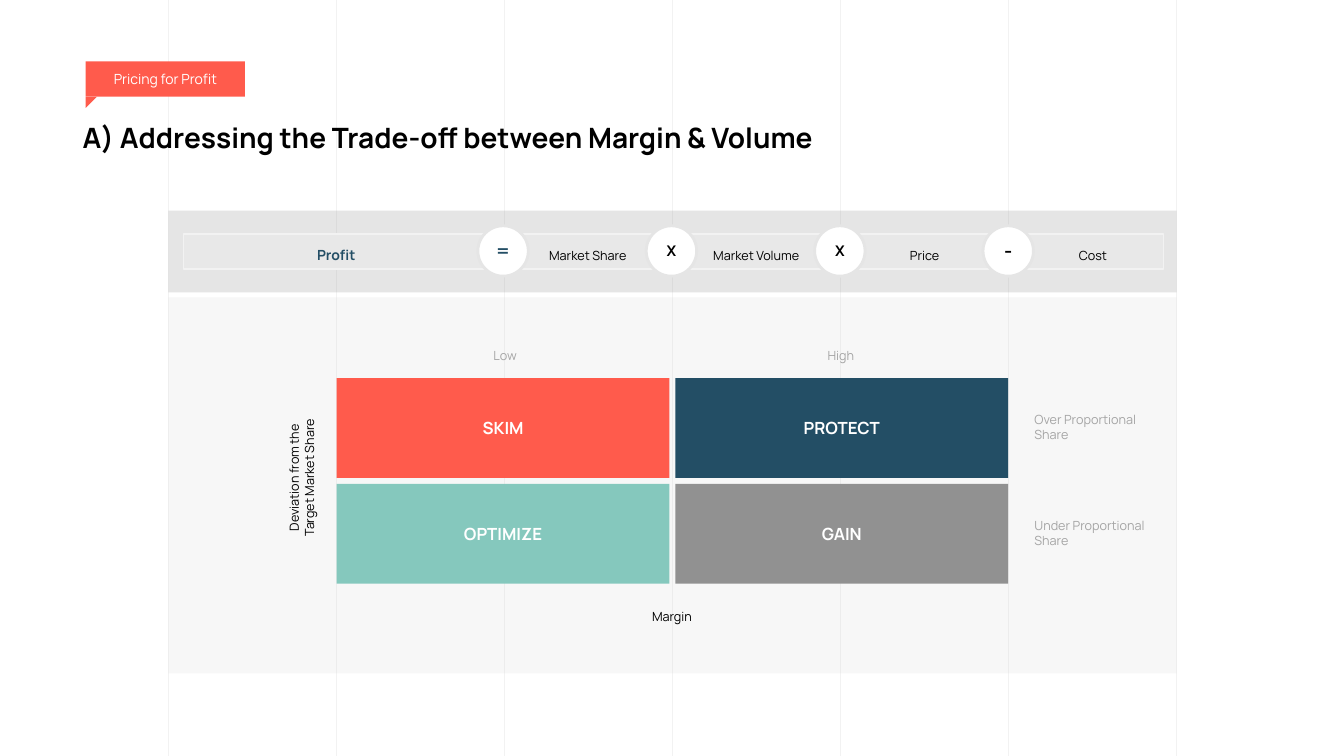
from lxml.etree import SubElement
from pptx import Presentation
from pptx.dml.color import RGBColor
from pptx.enum.shapes import MSO_CONNECTOR, MSO_SHAPE
from pptx.enum.text import MSO_ANCHOR, PP_ALIGN
from pptx.oxml.ns import qn
from pptx.util import Inches, Pt

WHITE = RGBColor(0xFF, 0xFF, 0xFF)
BLACK = RGBColor(0x00, 0x00, 0x00)
CORAL = RGBColor(0xFF, 0x5B, 0x4C)
NAVY = RGBColor(0x23, 0x4E, 0x65)
MINT = RGBColor(0x85, 0xC8, 0xBD)
GRAY = RGBColor(0x91, 0x91, 0x91)
LABEL_GRAY = RGBColor(0xA5, 0xA5, 0xA5)
BAND_GRAY = RGBColor(0x7F, 0x7F, 0x7F)
PANEL_GRAY = RGBColor(0xD8, 0xD8, 0xD8)
TERM_FILL = RGBColor(0xE8, 0xE8, 0xE8)
PALE_LINE = RGBColor(0xF2, 0xF2, 0xF2)
RING = RGBColor(0xE5, 0xE5, 0xE5)

presentation = Presentation()
presentation.slide_width = Inches(13.33)
presentation.slide_height = Inches(7.5)
slide = presentation.slides.add_slide(presentation.slide_layouts[6])


def add_box(kind, left, top, width, height, fill, line=None, line_width=1):
    shape = slide.shapes.add_shape(
        kind, Inches(left), Inches(top), Inches(width), Inches(height))
    shape.shadow.inherit = False
    shape.fill.solid()
    shape.fill.fore_color.rgb = fill
    if line is None:
        shape.line.fill.background()
    else:
        shape.line.color.rgb = line
        shape.line.width = Pt(line_width)
    return shape


def write(shape, text, size, color, bold=False, align=PP_ALIGN.CENTER,
          anchor=MSO_ANCHOR.MIDDLE, margin=0, spacing=None):
    """Fill a shape with text; margin is the inset above and below it."""
    frame = shape.text_frame
    frame.text = text
    frame.word_wrap = True
    frame.vertical_anchor = anchor
    frame.margin_left = frame.margin_right = 0
    frame.margin_top = frame.margin_bottom = Inches(margin)
    for paragraph in frame.paragraphs:
        paragraph.alignment = align
        if spacing:
            paragraph.line_spacing = spacing
        for run in paragraph.runs:
            run.font.name = "Manrope"
            run.font.size = Pt(size)
            run.font.bold = bold
            run.font.color.rgb = color


# Background grid lines
for column in range(1, 8):
    x = Inches(column * 10 / 6)
    grid_line = slide.shapes.add_connector(
        MSO_CONNECTOR.STRAIGHT, x, 0, x, Inches(7.5))
    grid_line.line.color.rgb = PALE_LINE
    grid_line.line.width = Pt(0.75)
    SubElement(grid_line._element.spPr, qn("a:effectLst"))

# Title and section tag
title = slide.shapes.add_textbox(
    Inches(0.82), Inches(1.13), Inches(8.93), Inches(0.46))
write(title, "A) Addressing the Trade-off between Margin & Volume",
      20, BLACK, bold=True, align=PP_ALIGN.LEFT)
tag = add_box(MSO_SHAPE.RECTANGLE, 0.85, 0.61, 1.58, 0.35, CORAL)
write(tag, "Pricing for Profit", 10, WHITE)
tag_tail = add_box(MSO_SHAPE.RIGHT_TRIANGLE, 0.85, 0.96, 0.11, 0.11, CORAL)
tag_tail.rotation = 90

# Translucent band behind the formula and panel behind the matrix
for top, height, color in [(2.09, 0.81, BAND_GRAY), (2.95, 3.73, PANEL_GRAY)]:
    panel = add_box(MSO_SHAPE.RECTANGLE, 1.67, top, 10, height, color)
    color_element = panel._element.spPr.find(qn("a:solidFill"))[0]
    SubElement(color_element, qn("a:alpha"), val="20000")

# Pricing matrix
quadrants = [("SKIM", CORAL), ("PROTECT", NAVY),
             ("OPTIMIZE", MINT), ("GAIN", GRAY)]
for index, (name, color) in enumerate(quadrants):
    row, column = divmod(index, 2)
    quadrant = add_box(MSO_SHAPE.RECTANGLE, 3.34 + column * 3.36,
                       3.75 + row * 1.05, 3.3, 0.99, color)
    write(quadrant, name, 12, WHITE, bold=True)

# Matrix labels
labels = [
    ("Low", 4.86, 3.4, 0.3, 0.25, LABEL_GRAY, PP_ALIGN.CENTER, 0),
    ("High", 8.19, 3.4, 0.3, 0.25, LABEL_GRAY, PP_ALIGN.CENTER, 0),
    ("Over Proportional\nShare", 10.26, 4.04, 1.36, 0.4, LABEL_GRAY,
     PP_ALIGN.LEFT, 0),
    ("Under Proportional\nShare", 10.26, 5.09, 1.18, 0.4, LABEL_GRAY,
     PP_ALIGN.LEFT, 0),
    ("Margin", 6.2, 5.99, 0.93, 0.25, BLACK, PP_ALIGN.CENTER, 0),
    ("Deviation from the Target Market Share", 2.31, 4.54, 1.36, 0.4, BLACK,
     PP_ALIGN.CENTER, 270),
]
for text, left, top, width, height, color, align, rotation in labels:
    label = slide.shapes.add_textbox(
        Inches(left), Inches(top), Inches(width), Inches(height))
    label.rotation = rotation
    write(label, text, 9, color, align=align, anchor=MSO_ANCHOR.TOP,
          margin=0.05)

# Profit formula: terms first, then the operators that overlap them
profit = add_box(MSO_SHAPE.RECTANGLE, 1.82, 2.32, 3.03, 0.35,
                 TERM_FILL, PALE_LINE)
write(profit, "Profit", 10, NAVY, bold=True, spacing=1.38)
for index, name in enumerate(["Market Share", "Market Volume", "Price", "Cost"]):
    term = add_box(MSO_SHAPE.RECTANGLE, 5.13 + index * 1.67, 2.32, 1.4, 0.35,
                   TERM_FILL, PALE_LINE)
    write(term, name, 9, BLACK, spacing=1.53)

operators = [("=", 14, NAVY), ("X", 10.5, BLACK),
             ("X", 10.5, BLACK), ("-", 14, BLACK)]
for index, (symbol, size, color) in enumerate(operators):
    circle = add_box(MSO_SHAPE.OVAL, 4.74 + index * 1.67, 2.24, 0.5, 0.5,
                     WHITE, RING, 2)
    write(circle, symbol, size, color, bold=True)

presentation.save("out.pptx")
